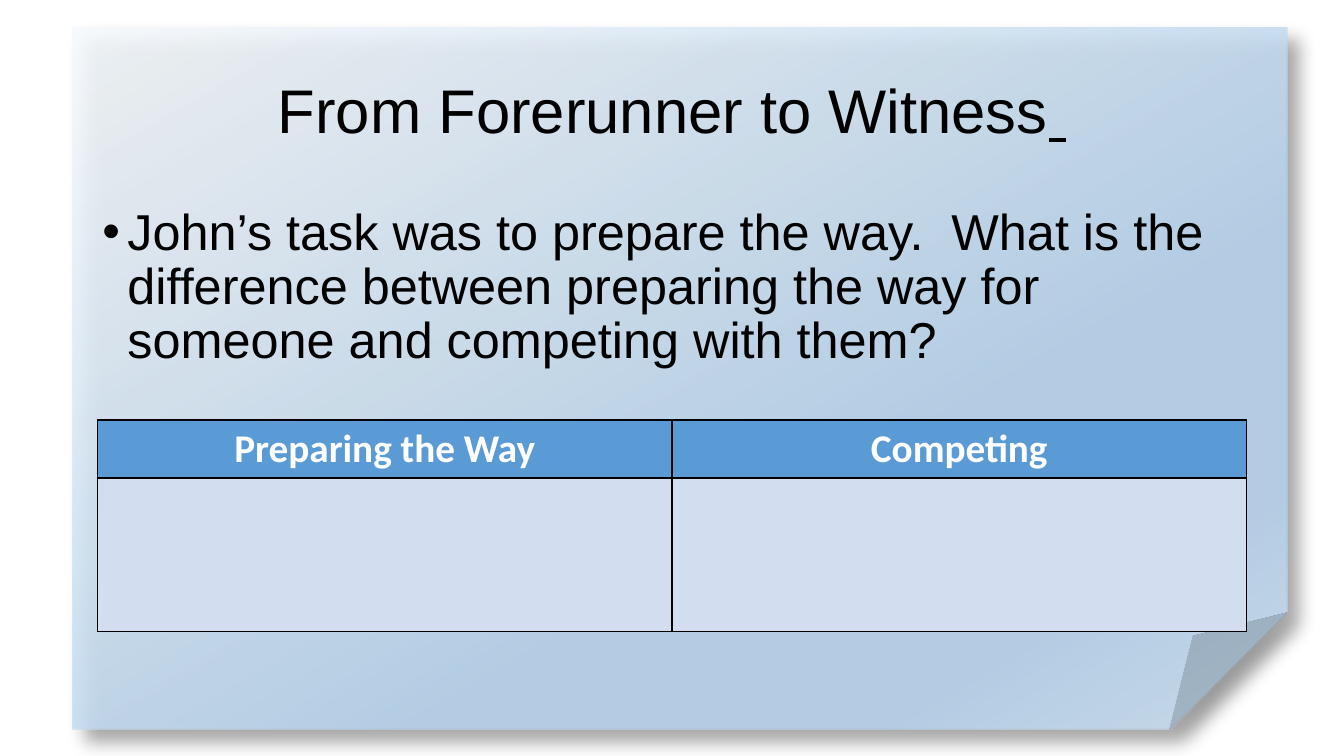
from dataclasses import dataclass

from lxml import etree
from pptx import Presentation
from pptx.dml.color import RGBColor
from pptx.enum.shapes import MSO_SHAPE
from pptx.enum.text import MSO_ANCHOR, PP_ALIGN
from pptx.oxml import parse_xml
from pptx.oxml.ns import nsdecls, qn
from pptx.util import Pt

FOLDED_CORNER = MSO_SHAPE.FOLDED_CORNER
TOP, MIDDLE = MSO_ANCHOR.TOP, MSO_ANCHOR.MIDDLE
LEFT, CENTER = PP_ALIGN.LEFT, PP_ALIGN.CENTER

BLACK, WHITE = "000000", "FFFFFF"
HEADER_BLUE, CELL_BLUE = "5B9BD5", "D2DEEF"
PAPER_OPACITY = 87
PAPER_STOPS = [(0, "F7FAFD"), (64, "B5D2EC"), (83, "B5D2EC"), (100, "CEE1F2")]


@dataclass
class Box:
    left: float
    top: float
    width: float
    height: float

    def lengths(self) -> tuple:
        return Pt(self.left), Pt(self.top), Pt(self.width), Pt(self.height)


@dataclass
class TextBlock:
    box: Box
    text: str
    size: float
    alignment: PP_ALIGN
    anchor: MSO_ANCHOR


PAPER = Box(51.84, 19.44, 867.6, 501.84)
TITLE = TextBlock(Box(66, 28.8, 828, 104.4), "From Forerunner to Witness",
                  44, CENTER, MIDDLE)
QUESTION = TextBlock(
    Box(66, 144, 828, 342.72),
    "John’s task was to prepare the way.  What is the difference between "
    "preparing the way for someone and competing with them?",
    36, LEFT, TOP)
TABLE = Box(69.6, 300, 820.8, 151)
ROW_HEIGHTS = [41.4, 109.6]
HEADERS = ["Preparing the Way", "Competing"]


def color(value: str) -> RGBColor:
    return RGBColor.from_string(value)


def format_font(font, name: str, size: float, value: str) -> None:
    font.name = name
    font.size = Pt(size)
    font.color.rgb = color(value)


def add_paper(slide, box: Box) -> None:
    shape = slide.shapes.add_shape(FOLDED_CORNER, *box.lengths())
    shape.line.fill.background()
    stops = "".join(
        f'<a:gs pos="{position * 1000}"><a:srgbClr val="{value}">'
        f'<a:alpha val="{PAPER_OPACITY * 1000}"/></a:srgbClr></a:gs>'
        for position, value in PAPER_STOPS)
    gradient = parse_xml(
        f'<a:gradFill {nsdecls("a")} rotWithShape="1"><a:gsLst>{stops}</a:gsLst>'
        f'<a:lin ang="{60 * 60000}" scaled="0"/></a:gradFill>')
    shadow = parse_xml(
        f'<a:effectLst {nsdecls("a")}><a:outerShdw blurRad="{Pt(13)}" '
        f'dist="{Pt(13)}" dir="{45 * 60000}" algn="tl" rotWithShape="0">'
        f'<a:srgbClr val="{BLACK}"><a:alpha val="40000"/></a:srgbClr>'
        f'</a:outerShdw></a:effectLst>')
    properties = shape._element.spPr
    properties.find(qn("a:prstGeom")).addnext(gradient)
    properties.append(shadow)


def add_text(slide, block: TextBlock):
    text_frame = slide.shapes.add_textbox(*block.box.lengths()).text_frame
    text_frame.word_wrap = True
    text_frame.vertical_anchor = block.anchor
    text_frame.text = block.text
    paragraph = text_frame.paragraphs[0]
    paragraph.alignment = block.alignment
    paragraph.line_spacing = 0.9
    format_font(paragraph.runs[0].font, "Arial", block.size, BLACK)
    return paragraph


def add_bullet(paragraph) -> None:
    properties = paragraph._p.get_or_add_pPr()
    properties.set("marL", str(Pt(18)))
    properties.set("indent", str(-Pt(18)))
    etree.SubElement(properties, qn("a:buFont")).set("typeface", "Arial")
    etree.SubElement(properties, qn("a:buChar")).set("char", "•")


def add_borders(cell) -> None:
    properties = cell._tc.get_or_add_tcPr()
    for index, side in enumerate(("lnL", "lnR", "lnT", "lnB")):
        properties.insert(index, parse_xml(
            f'<a:{side} {nsdecls("a")} w="{Pt(1)}"><a:solidFill>'
            f'<a:srgbClr val="{BLACK}"/></a:solidFill></a:{side}>'))


def add_comparison(slide, box: Box) -> None:
    table = slide.shapes.add_table(
        len(ROW_HEIGHTS), len(HEADERS), *box.lengths()).table
    for row, height in zip(table.rows, ROW_HEIGHTS):
        row.height = Pt(height)
    for column, header in enumerate(HEADERS):
        for row, fill in enumerate((HEADER_BLUE, CELL_BLUE)):
            cell = table.cell(row, column)
            cell.fill.solid()
            cell.fill.fore_color.rgb = color(fill)
            add_borders(cell)
        heading = table.cell(0, column).text_frame
        heading.text = header
        paragraph = heading.paragraphs[0]
        paragraph.alignment = CENTER
        font = paragraph.runs[0].font
        format_font(font, "Calibri", 28, WHITE)
        font.bold = True


def main() -> None:
    presentation = Presentation()
    presentation.slide_width, presentation.slide_height = Pt(960), Pt(540)
    slide = presentation.slides.add_slide(presentation.slide_layouts[6])

    # Folded paper
    add_paper(slide, PAPER)

    # Title with its underlined trailing space
    title = add_text(slide, TITLE)
    underlined_space = title.add_run()
    underlined_space.text = " "
    format_font(underlined_space.font, "Arial", TITLE.size, BLACK)
    underlined_space.font.underline = True

    # Question
    add_bullet(add_text(slide, QUESTION))

    # Comparison table
    add_comparison(slide, TABLE)

    presentation.save("out.pptx")


if __name__ == "__main__":
    main()
